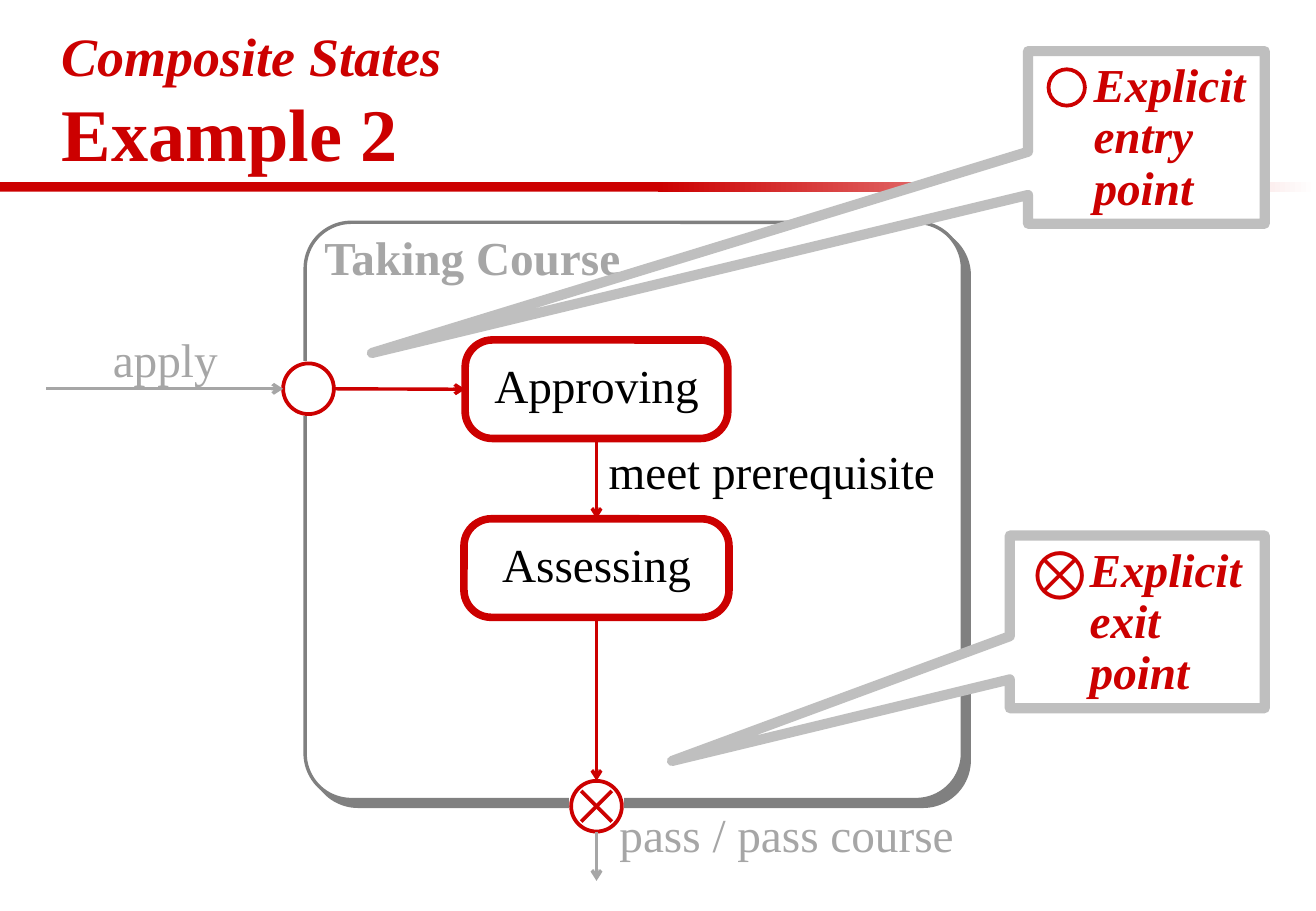
from lxml import etree
from pptx import Presentation
from pptx.dml.color import RGBColor
from pptx.enum.shapes import MSO_CONNECTOR, MSO_SHAPE
from pptx.enum.text import MSO_ANCHOR, PP_ALIGN
from pptx.oxml.ns import qn
from pptx.util import Cm, Pt

RECT, ROUNDED, OVAL = MSO_SHAPE.RECTANGLE, MSO_SHAPE.ROUNDED_RECTANGLE, MSO_SHAPE.OVAL
CALLOUT = MSO_SHAPE.RECTANGULAR_CALLOUT
STRAIGHT = MSO_CONNECTOR.STRAIGHT
TOP, MIDDLE, BOTTOM = MSO_ANCHOR.TOP, MSO_ANCHOR.MIDDLE, MSO_ANCHOR.BOTTOM
LEFT, CENTER = PP_ALIGN.LEFT, PP_ALIGN.CENTER
SIDE_TOP, SIDE_LEFT, SIDE_BOTTOM = 0, 1, 2

FONT = "Times New Roman"
COLORS = {
    "red": "CC0000", "white": "FFFFFF", "black": "000000",
    "label": "A6A6A6", "frame": "808080", "callout": "BFBFBF",
}

SLIDE_SIZE = (27.51, 19.05)
RULE_TOP, RULE_HEIGHT = 3.81, 0.2
FRAME = (6.38, 4.65, 13.74, 12.07)
GAPS = [(11.94, 15.54, 1.07, 1.78), (5.92, 7.59, 1.78, 1.07)]
TITLE = ("Composite States\nExample 2", (1.04, 0.74, 25.4, 3.07))
LABELS = [
    ("Taking Course", (6.53, 4.65, 8.51, 1.45), "label", LEFT, True),
    ("apply", (2.06, 6.78, 2.79, 1.45), "label", CENTER, False),
    ("pass / pass course", (12.7, 16.71, 7.62, 1.45), "label", LEFT, False),
    ("meet prerequisite", (12.45, 9.12, 7.37, 2.64), "black", CENTER, False),
]
FLOW_X = 12.47
STATE_HEIGHT = 2.06
STATES = [("Approving", 7.11, 5.49), ("Assessing", 10.85, 5.54)]
POINT_SIZE, CROSS_REACH = 1.06, 0.32
ENTRY, EXIT = (6.45, 8.13), (FLOW_X, 16.86)
CALLOUTS = [
    ("Explicit entry point", (21.49, 1.07, 4.95, 3.61), (-3.271, 1.249), 1.12),
    ("Explicit exit point", (21.11, 11.2, 5.33, 3.61), (-1.825, 0.806), 1.42),
]
ENTRY_SYMBOL, ENTRY_SYMBOL_SIZE = (22.3, 1.83), 0.76
EXIT_SYMBOL = ("⊗", (21.21, 10.97, 1.6, 1.96))

prs = Presentation()
prs.slide_width, prs.slide_height = map(Cm, SLIDE_SIZE)
shapes = prs.slides.add_slide(prs.slide_layouts[6]).shapes


def rgb(color):
    return RGBColor.from_string(COLORS[color])


def add_block(kind, box, fill=None, line=None, width=0):
    block = shapes.add_shape(kind, *map(Cm, box))
    block.shadow.inherit = False
    if fill:
        block.fill.solid()
        block.fill.fore_color.rgb = rgb(fill)
    else:
        block.fill.background()
    if line:
        block.line.color.rgb = rgb(line)
        block.line.width = Pt(width)
    else:
        block.line.fill.background()
    return block


def write(holder, text, color, size=28, bold=False, italic=False,
          align=LEFT, anchor=TOP, wrap=True):
    frame = holder.text_frame
    frame.text = text
    frame.word_wrap = wrap
    frame.vertical_anchor = anchor
    for paragraph in frame.paragraphs:
        paragraph.alignment = align
        for run in paragraph.runs:
            run.font.name = FONT
            run.font.size = Pt(size)
            run.font.bold = bold
            run.font.italic = italic
            run.font.color.rgb = rgb(color)
    return frame


def add_label(text, box, color, **style):
    return write(shapes.add_textbox(*map(Cm, box)), text, color, **style)


def add_line(start, end, color, width=2, arrow=True):
    line = shapes.add_connector(STRAIGHT, *map(Cm, start + end))
    line.line.color.rgb = rgb(color)
    line.line.width = Pt(width)
    if arrow:
        etree.SubElement(line.line._get_or_add_ln(), qn("a:tailEnd"), type="arrow")
    etree.SubElement(line._element.spPr, qn("a:effectLst"))
    return line


def add_point(center, size):
    x, y = center
    add_block(OVAL, (x - size / 2, y - size / 2, size, size), line="red", width=2.25)


def add_frame_shadow(frame):
    effects = frame._element.spPr.find(qn("a:effectLst"))
    shadow = etree.SubElement(effects, qn("a:outerShdw"), dist=str(Pt(5.7)),
                              dir="2700000", algn="ctr", rotWithShape="0")
    etree.SubElement(shadow, qn("a:srgbClr"), val=COLORS["frame"])


half = SLIDE_SIZE[0] / 2
add_block(RECT, (0, RULE_TOP, half, RULE_HEIGHT), "red")
fade = add_block(RECT, (half, RULE_TOP, half, RULE_HEIGHT), "red")
fade.fill.gradient()
fade.fill.gradient_angle = 0
for stop, color in zip(fade.fill.gradient_stops, ("red", "white")):
    stop.color.rgb = rgb(color)

course = add_block(ROUNDED, FRAME, "white", "frame", 2)
course.adjustments[0] = 0.08
add_frame_shadow(course)
for gap in GAPS:
    add_block(RECT, gap, "white", "white", 2.25)

title = add_label(*TITLE, "red", size=32, bold=True, anchor=BOTTOM)
subject, heading = title.paragraphs
subject.runs[0].font.italic = True
heading.runs[0].font.size = Pt(44)

for text, box, color, align, bold in LABELS:
    add_label(text, box, color, align=align, bold=bold)

states = []
for name, top, width in STATES:
    state = add_block(ROUNDED, (FLOW_X - width / 2, top, width, STATE_HEIGHT),
                      line="red", width=4.5)
    state.adjustments[0] = 0.277
    write(state, name, "black", align=CENTER, anchor=MIDDLE).margin_bottom = Cm(0.33)
    states.append(state)
approving, assessing = states

for point in (ENTRY, EXIT):
    add_point(point, POINT_SIZE)
for slope in (1, -1):
    dx, dy = CROSS_REACH, CROSS_REACH * slope
    add_line((EXIT[0] - dx, EXIT[1] - dy), (EXIT[0] + dx, EXIT[1] + dy),
             "red", 2.25, arrow=False)

radius = POINT_SIZE / 2
add_line((0.97, ENTRY[1]), (ENTRY[0] - radius, ENTRY[1]), "label")
add_line((FLOW_X, EXIT[1] + radius), (FLOW_X, 18.42), "label")
enter = add_line((ENTRY[0] + radius, ENTRY[1]), (9.73, ENTRY[1]), "red")
enter.end_connect(approving, SIDE_LEFT)
proceed = add_line((FLOW_X, 9.17), (FLOW_X, 10.85), "red")
proceed.begin_connect(approving, SIDE_BOTTOM)
proceed.end_connect(assessing, SIDE_TOP)
leave = add_line((FLOW_X, 12.91), (FLOW_X, EXIT[1] - radius), "red")
leave.begin_connect(assessing, SIDE_BOTTOM)

for text, box, tip, indent in CALLOUTS:
    callout = add_block(CALLOUT, box, "white", "callout", 6)
    callout.adjustments[0], callout.adjustments[1] = tip
    note = write(callout, text, "red", bold=True, italic=True)
    note.margin_top = Cm(0.23)
    note.paragraphs[0].line_spacing = 0.9
    note.paragraphs[0]._p.get_or_add_pPr().set("marL", str(Cm(indent)))

add_point(ENTRY_SYMBOL, ENTRY_SYMBOL_SIZE)
add_label(*EXIT_SYMBOL, "red", size=40, wrap=False)

prs.save("out.pptx")
